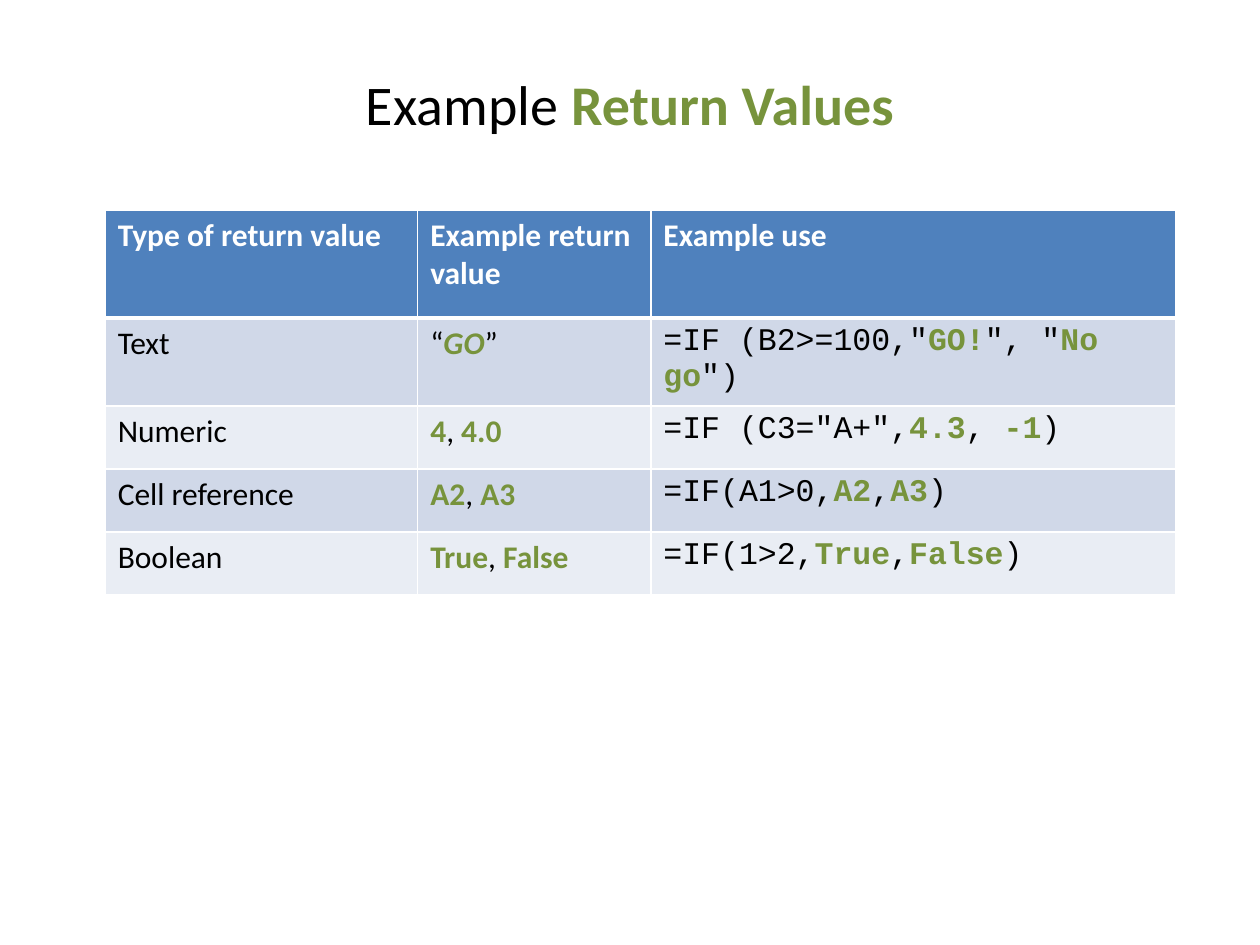
from lxml import etree
from pptx import Presentation
from pptx.dml.color import RGBColor
from pptx.enum.text import MSO_ANCHOR, PP_ALIGN
from pptx.oxml.ns import qn
from pptx.util import Cm, Pt

CENTER = PP_ALIGN.CENTER
LEFT = PP_ALIGN.LEFT
MIDDLE = MSO_ANCHOR.MIDDLE

BODY_FONT, CODE_FONT = "Calibri", "Courier New"
BLACK, WHITE, GREEN = "000000", "FFFFFF", "77933C"
HEADER_FILL = "4F81BD"
BAND_FILLS = ("D0D8E8", "E9EDF4")

COLUMN_WIDTHS = (6.3, 4.7, 10.59)
HEADER_HEIGHT, ROW_HEIGHT = 2.18, 1.27

# Text between bars is highlighted.
HEADINGS = ("Type of return value", "Example return value", "Example use")
RETURN_VALUES = (
    ("Text", "“|GO|”", '=IF (B2>=100,"|GO!|", "|No go|")'),
    ("Numeric", "|4|, |4.0|", '=IF (C3="A+",|4.3|,| -1|)'),
    ("Cell reference", "|A2|, |A3|", "=IF(A1>0,|A2|,|A3|)"),
    ("Boolean", "|True|, |False|", "=IF(1>2,|True|,|False|)"),
)


def rgb(value):
    return RGBColor.from_string(value)


def write(frame, text, size=18, font=BODY_FONT, color=BLACK, bold=False,
          italic_highlight=False, align=LEFT):
    """Fill the frame with one paragraph, with text between bars in bold green."""
    paragraph = frame.paragraphs[0]
    paragraph.alignment = align
    for index, part in enumerate(text.split("|")):
        if not part:
            continue
        highlighted = index % 2 == 1
        run = paragraph.add_run()
        run.text = part
        run.font.name = font
        run.font.size = Pt(size)
        run.font.bold = bold or highlighted
        run.font.italic = highlighted and italic_highlight
        run.font.color.rgb = rgb(GREEN if highlighted else color)


def set_borders(cell, bottom=1, top=1):
    properties = cell._tc.get_or_add_tcPr()
    for side, width in (("L", 1), ("R", 1), ("T", top), ("B", bottom)):
        line = etree.SubElement(properties, qn(f"a:ln{side}"), w=str(Pt(width)))
        fill = etree.SubElement(line, qn("a:solidFill"))
        etree.SubElement(fill, qn("a:srgbClr"), val=WHITE)


def fill_cell(cell, text, fill, bottom=1, top=1, **text_format):
    set_borders(cell, bottom, top)
    cell.fill.solid()
    cell.fill.fore_color.rgb = rgb(fill)
    write(cell.text_frame, text, **text_format)


def add_title(slide, text):
    frame = slide.shapes.add_textbox(Cm(1.27), Cm(0.76), Cm(22.86), Cm(2.62)).text_frame
    frame.word_wrap = True
    frame.vertical_anchor = MIDDLE
    write(frame, text, size=32, align=CENTER)


def add_return_value_table(slide):
    row_count = len(RETURN_VALUES) + 1
    height = HEADER_HEIGHT + ROW_HEIGHT * len(RETURN_VALUES)
    table = slide.shapes.add_table(
        row_count, len(HEADINGS), Cm(2.12), Cm(4.23),
        Cm(sum(COLUMN_WIDTHS)), Cm(height)).table
    for column, width in zip(table.columns, COLUMN_WIDTHS):
        column.width = Cm(width)
    for index, row in enumerate(table.rows):
        row.height = Cm(ROW_HEIGHT if index else HEADER_HEIGHT)

    for column, heading in enumerate(HEADINGS):
        fill_cell(table.cell(0, column), heading, HEADER_FILL, bottom=3,
                  color=WHITE, bold=True)
    for row, values in enumerate(RETURN_VALUES, start=1):
        for column, value in enumerate(values):
            fill_cell(table.cell(row, column), value, BAND_FILLS[(row - 1) % 2],
                      top=3 if row == 1 else 1,
                      font=CODE_FONT if column == 2 else BODY_FONT,
                      italic_highlight=(row, column) == (1, 1))


def main():
    presentation = Presentation()
    presentation.slide_width, presentation.slide_height = Cm(25.4), Cm(19.05)
    slide = presentation.slides.add_slide(presentation.slide_layouts[6])
    add_title(slide, "Example |Return Values|")
    add_return_value_table(slide)
    presentation.save("out.pptx")


if __name__ == "__main__":
    main()
